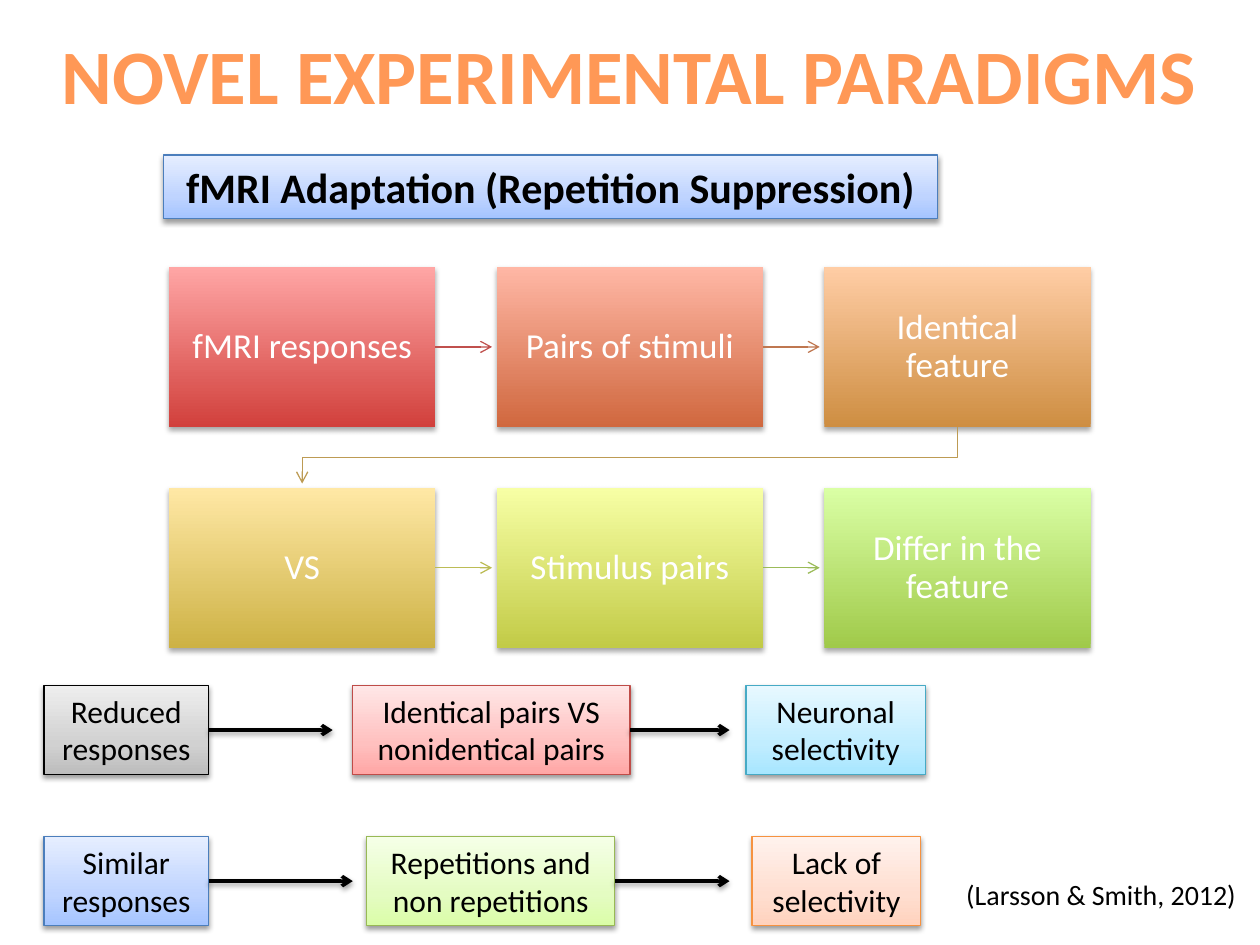
import pptx
import pptx.dml.color
import pptx.enum.shapes
import pptx.enum.text
import pptx.oxml
import pptx.oxml.ns
import pptx.util
import lxml.etree

Pt = pptx.util.Pt
RGB = pptx.dml.color.RGBColor
qn = pptx.oxml.ns.qn
ALIGN = pptx.enum.text.PP_ALIGN
ANCHOR = pptx.enum.text.MSO_ANCHOR
FIT = pptx.enum.text.MSO_AUTO_SIZE
RECT = pptx.enum.shapes.MSO_SHAPE.RECTANGLE
STRAIGHT = pptx.enum.shapes.MSO_CONNECTOR.STRAIGHT

BLACK = RGB(0x00, 0x00, 0x00)
WHITE = RGB(0xFF, 0xFF, 0xFF)
ORANGE = RGB(0xFF, 0x98, 0x56)
RED_EDGE = RGB(0xC0, 0x50, 0x4D)
RUST_EDGE = RGB(0xBF, 0x77, 0x50)
GOLD_EDGE = RGB(0xBD, 0x9B, 0x53)
LIME_EDGE = RGB(0xBC, 0xBC, 0x56)
LEAF_EDGE = RGB(0x9B, 0xBB, 0x59)
BLUE_LINE = RGB(0x4B, 0x7E, 0xBC)
RED_LINE = RGB(0xBF, 0x4C, 0x48)
GREEN_LINE = RGB(0x98, 0xB9, 0x55)
AQUA_LINE = RGB(0x46, 0xAA, 0xC5)
PEACH_LINE = RGB(0xF6, 0x92, 0x40)

RED = (RGB(0xD1, 0x40, 0x3C), RGB(0xFF, 0xA6, 0xA5))
RUST = (RGB(0xD0, 0x68, 0x3F), RGB(0xFF, 0xB7, 0xA5))
AMBER = (RGB(0xCE, 0x8E, 0x42), RGB(0xFF, 0xCD, 0xA5))
GOLD = (RGB(0xCD, 0xB2, 0x45), RGB(0xFF, 0xE8, 0xA5))
LIME = (RGB(0xC2, 0xCB, 0x47), RGB(0xF7, 0xFF, 0xA5))
LEAF = (RGB(0xA0, 0xCA, 0x4A), RGB(0xDA, 0xFF, 0xA5))
BLUE = (RGB(0xA4, 0xC4, 0xFF), RGB(0xBF, 0xD4, 0xFF), RGB(0xE6, 0xEE, 0xFF))
GREY = (RGB(0xBD, 0xBD, 0xBD), RGB(0xD1, 0xD1, 0xD1), RGB(0xEE, 0xEE, 0xEE))
PINK = (RGB(0xFF, 0xA6, 0xA5), RGB(0xFF, 0xC0, 0xBF), RGB(0xFF, 0xE7, 0xE7))
GREEN = (RGB(0xDA, 0xFD, 0xA7), RGB(0xE4, 0xFC, 0xC2), RGB(0xF5, 0xFF, 0xE7))
AQUA = (RGB(0xA7, 0xE6, 0xFF), RGB(0xC1, 0xED, 0xFF), RGB(0xE7, 0xF8, 0xFF))
PEACH = (RGB(0xFF, 0xD2, 0xBD), RGB(0xFF, 0xDE, 0xD0), RGB(0xFF, 0xF2, 0xED))


def add(root, tag, **attrs):
    return lxml.etree.SubElement(root, qn(tag), attrs)


class Board:
    def __init__(self, slide, font):
        self.slide = slide
        self.font = font

    def letter(self, frame, words, size, color, bold=False):
        para = frame.paragraphs[0]
        para.alignment = ALIGN.CENTER
        run = para.add_run()
        run.text = words
        run.font.name = self.font
        run.font.size = Pt(size)
        run.font.bold = bold
        run.font.color.rgb = color
        return para

    def blend(self, shape, tones):
        shape.fill.gradient()
        shape.fill.gradient_angle = 90
        stops = shape._element.spPr.find(".//" + qn("a:gsLst"))
        for stop in list(stops):
            stops.remove(stop)
        places = (0, 100) if len(tones) == 2 else (0, 35, 100)
        for place, tone in zip(places, tones):
            stop = add(stops, "a:gs", pos=str(place * 1000))
            add(stop, "a:srgbClr", val=str(tone))

    def shade(self, root, dark, gap):
        cast = add(root, "a:outerShdw", blurRad=str(Pt(3.1)), dist=str(Pt(gap)),
                   dir="5400000", rotWithShape="0")
        tone = add(cast, "a:srgbClr", val=str(BLACK))
        add(tone, "a:alpha", val=str(dark * 1000))

    def block(self, place, tones, dark, gap):
        shape = self.slide.shapes.add_shape(RECT, *map(Pt, place))
        self.blend(shape, tones)
        shape.shadow.inherit = False
        self.shade(shape._element.spPr.find(qn("a:effectLst")), dark, gap)
        shape.text_frame.word_wrap = True
        return shape

    def tile(self, place, tones, words):
        shape = self.block(place, tones, 35, 1.8)
        shape.line.fill.background()
        frame = shape.text_frame
        frame.vertical_anchor = ANCHOR.MIDDLE
        frame.margin_left = frame.margin_right = Pt(11.5)
        frame.margin_top = frame.margin_bottom = Pt(11.5)
        self.letter(frame, words, 20, WHITE).line_spacing = 0.9
        return shape

    def card(self, place, tones, edge, words, size=18, bold=False):
        shape = self.block(place, tones, 38, 1.6)
        shape.line.color.rgb = edge
        shape.line.width = Pt(0.75)
        frame = shape.text_frame
        frame.vertical_anchor = ANCHOR.TOP
        frame.auto_size = FIT.SHAPE_TO_FIT_TEXT
        self.letter(frame, words, size, BLACK, bold)
        return shape

    def label(self, place, words, size, color, bold=False, wrap=True):
        frame = self.slide.shapes.add_textbox(*map(Pt, place)).text_frame
        frame.word_wrap = wrap
        frame.auto_size = FIT.SHAPE_TO_FIT_TEXT
        self.letter(frame, words, size, color, bold)

    def stroke(self, line, color, width):
        line.color.rgb = color
        line.width = Pt(width)
        add(line._get_or_add_ln(), "a:tailEnd", type="arrow")

    def link(self, start, end, color, width=0.75, cast=False):
        x = start.left + start.width
        y = start.top + start.height // 2
        wire = self.slide.shapes.add_connector(STRAIGHT, x, y, Pt(end), y)
        wire.begin_connect(start, 3)
        self.stroke(wire.line, color, width)
        glow = add(wire._element.spPr, "a:effectLst")
        if cast:
            self.shade(glow, 38, 1.6)

    def bend(self, points, color):
        first, *rest = points
        pen = self.slide.shapes.build_freeform(Pt(first[0]), Pt(first[1]))
        pen.add_line_segments([(Pt(x), Pt(y)) for x, y in rest], close=False)
        shape = pen.convert_to_shape()
        shape.fill.background()
        shape.shadow.inherit = False
        self.stroke(shape.line, color, 0.75)


def main():
    deck = pptx.Presentation()
    deck.slide_width, deck.slide_height = Pt(720), Pt(540)
    board = Board(deck.slides.add_slide(deck.slide_layouts[6]), "Calibri")

    board.label((25.2, 12.2, 669.6, 60.5), "NOVEL EXPERIMENTAL PARADIGMS",
                44, ORANGE, bold=True, wrap=False)
    board.card((93.6, 88.6, 442, 36.3), BLUE, BLUE_LINE,
               "fMRI Adaptation (Repetition Suppression)", 24, True)

    left, top, wide, high = 96.6, 152.6, 152.2, 91.3
    step, drop = 187.2, 126.2
    grid = (
        (("fMRI responses", RED, RED_EDGE), ("Pairs of stimuli", RUST, RUST_EDGE),
         ("Identical feature", AMBER, None)),
        (("VS", GOLD, LIME_EDGE), ("Stimulus pairs", LIME, LEAF_EDGE),
         ("Differ in the feature", LEAF, None)),
    )
    for row, tiles in enumerate(grid):
        for col, (words, tones, edge) in enumerate(tiles):
            x = left + col * step
            tile = board.tile((x, top + row * drop, wide, high), tones, words)
            if edge:
                board.link(tile, x + step - 2.6, edge)

    near, far = left + wide / 2, left + 2 * step + wide / 2
    base, mid = top + high, top + (high + drop) / 2
    board.bend(((far, base), (far, mid), (near, mid), (near, top + drop - 2.5)),
               GOLD_EDGE)

    flows = (
        (391.7, (
            (25.2, 94, GREY, BLACK, "Reduced responses", 190.1),
            (201.4, 158.6, PINK, RED_LINE, "Identical pairs VS nonidentical pairs", 416.9),
            (426.4, 102.4, AQUA, AQUA_LINE, "Neuronal selectivity", None))),
        (478, (
            (25.2, 94, BLUE, BLUE_LINE, "Similar responses", 201.6),
            (209.6, 141.8, GREEN, GREEN_LINE, "Repetitions and non repetitions", 416.9),
            (429.8, 96.4, PEACH, PEACH_LINE, "Lack of selectivity", None))),
    )
    for y, cards in flows:
        for x, width, tones, edge, words, end in cards:
            card = board.card((x, y, width, 51), tones, edge, words)
            if end:
                board.link(card, end, BLACK, 2, True)

    board.label((541.4, 498.2, 175.7, 26.6), "(Larsson & Smith, 2012)", 16, BLACK)
    deck.save("out.pptx")


if __name__ == "__main__":
    main()
